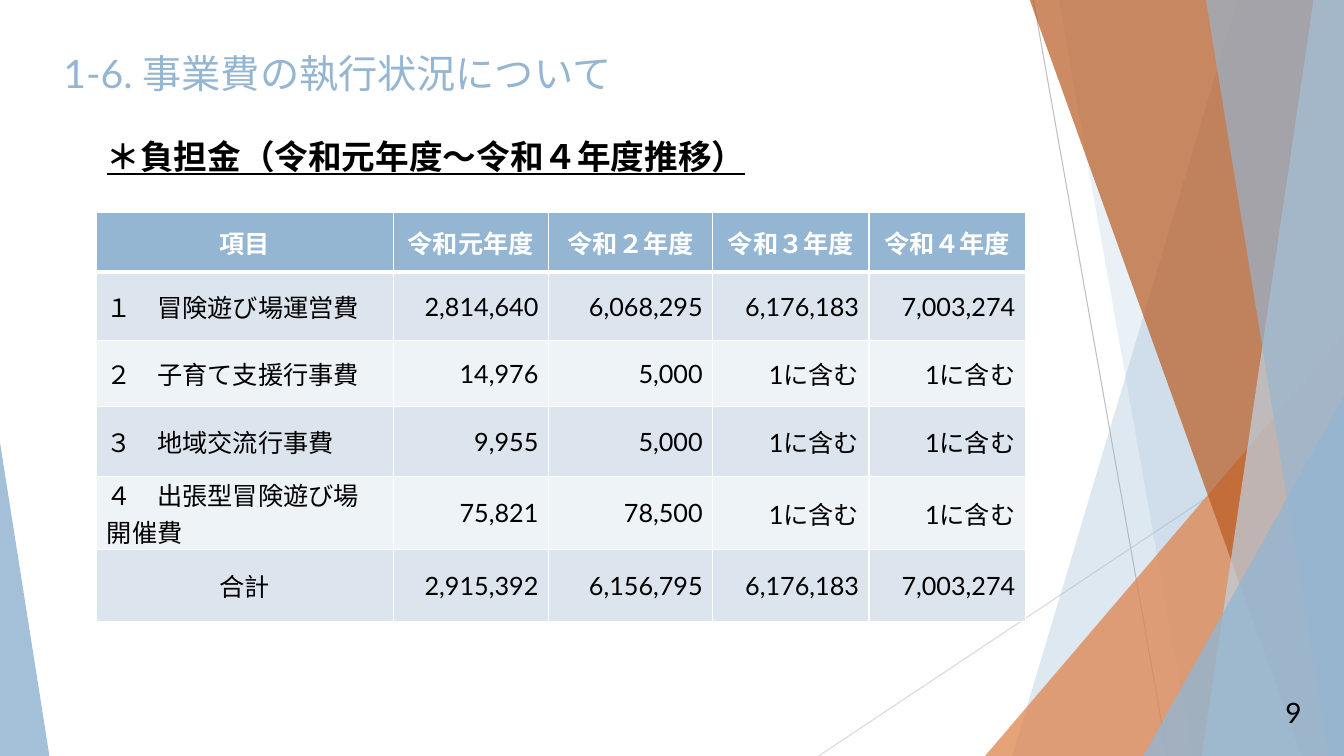
from lxml import etree
from pptx import Presentation
from pptx.dml import color
from pptx.enum import shapes, text
from pptx.oxml import ns
from pptx.util import Inches, Pt

FONT = "Lato"
BLUE, ORANGE, WHITE, BLACK = "94B6D2", "DD8047", "FFFFFF", "000000"
BANDS = ("DCE5EE", "EEF3F7")
TOP, BOTTOM, RIGHT = -0.01, 7.5, 13.33
LEFT_ALIGN, CENTER, RIGHT_ALIGN = (
    text.PP_ALIGN.LEFT, text.PP_ALIGN.CENTER, text.PP_ALIGN.RIGHT)

COLUMN_WIDTHS = (2.94, 1.54, 1.63, 1.55, 1.55)
ROW_HEIGHTS = (0.59, 0.68, 0.65, 0.7, 0.72, 0.72)
INCLUDED = "1に含む"
COSTS = (
    ("項目", "令和元年度", "令和２年度", "令和３年度", "令和４年度"),
    ("１　冒険遊び場運営費", "2,814,640", "6,068,295", "6,176,183", "7,003,274"),
    ("２　子育て支援行事費", "14,976", "5,000", INCLUDED, INCLUDED),
    ("３　地域交流行事費", "9,955", "5,000", INCLUDED, INCLUDED),
    ("４　出張型冒険遊び場開催費", "75,821", "78,500", INCLUDED, INCLUDED),
    ("合計", "2,915,392", "6,156,795", "6,176,183", "7,003,274"),
)


def rgb(value):
    return color.RGBColor.from_string(value)


def paint(shape, fill, opacity):
    """Give a shape a translucent fill, no outline and no shadow."""
    shape.shadow.inherit = False
    shape.line.fill.background()
    shape.fill.solid()
    shape.fill.fore_color.rgb = rgb(fill)
    fill_color = shape.fill._xPr.find(ns.qn("a:solidFill"))[0]
    etree.SubElement(fill_color, ns.qn("a:alpha"), val=str(opacity * 1000))


def add_line(slide, start, end, line_color):
    ends = [Inches(value) for value in start + end]
    line = slide.shapes.add_connector(shapes.MSO_CONNECTOR.STRAIGHT, *ends)
    line.line.color.rgb = rgb(line_color)
    line.line.width = Pt(0.75)
    etree.SubElement(line._element.spPr, ns.qn("a:effectLst"))


def add_band(slide, top_left, bottom_left, fill, opacity):
    """Fill the area from a slanted left edge to the right slide edge."""
    builder = slide.shapes.build_freeform(
        Inches(top_left), Inches(TOP), scale=1.0)
    corners = ((RIGHT, TOP), (RIGHT, BOTTOM), (bottom_left, BOTTOM))
    builder.add_line_segments(
        [(Inches(x), Inches(y)) for x, y in corners], close=True)
    paint(builder.convert_to_shape(), fill, opacity)


def add_triangle(slide, left, top, width, apex, fill, opacity):
    triangle = slide.shapes.add_shape(
        shapes.MSO_SHAPE.ISOSCELES_TRIANGLE, Inches(left), Inches(top),
        Inches(width), Inches(BOTTOM - top))
    triangle.adjustments[0] = apex
    paint(triangle, fill, opacity)


def write(frame, words, size=18, font_color=BLACK, bold=False,
          underline=False, align=LEFT_ALIGN, line_spacing=None, before=None):
    paragraph = frame.paragraphs[0]
    paragraph.alignment = align
    if line_spacing:
        paragraph.line_spacing = Pt(line_spacing)
    if before:
        paragraph.space_before = Pt(before)
    run = paragraph.add_run()
    run.text = words
    run.font.name = FONT
    run.font.size = Pt(size)
    run.font.bold = bold
    run.font.underline = underline
    run.font.color.rgb = rgb(font_color)


def add_text(slide, left, top, width, height, words,
             anchor=text.MSO_ANCHOR.TOP, **style):
    box = slide.shapes.add_textbox(
        Inches(left), Inches(top), Inches(width), Inches(height))
    box.text_frame.word_wrap = True
    box.text_frame.vertical_anchor = anchor
    write(box.text_frame, words, **style)


def set_borders(cell, **widths):
    """Draw white cell borders; widths are points by side."""
    properties = cell._tc.get_or_add_tcPr()
    for index, (side, width) in enumerate(widths.items()):
        border = etree.Element(ns.qn("a:" + side), w=str(Pt(width)))
        fill = etree.SubElement(border, ns.qn("a:solidFill"))
        etree.SubElement(fill, ns.qn("a:srgbClr"), val=WHITE)
        properties.insert(index, border)


def add_cost_table(slide):
    table = slide.shapes.add_table(
        len(COSTS), len(COLUMN_WIDTHS), Inches(0.96), Inches(2.11),
        Inches(sum(COLUMN_WIDTHS)), Inches(sum(ROW_HEIGHTS))).table
    for column, width in zip(table.columns, COLUMN_WIDTHS):
        column.width = Inches(width)
    for row, height in zip(table.rows, ROW_HEIGHTS):
        row.height = Inches(height)

    last = len(COSTS) - 1
    for row, values in enumerate(COSTS):
        header = row == 0
        for column, words in enumerate(values):
            cell = table.cell(row, column)
            cell.vertical_anchor = text.MSO_ANCHOR.MIDDLE
            cell.margin_top = cell.margin_bottom = 0
            cell.fill.solid()
            cell.fill.fore_color.rgb = rgb(
                BLUE if header else BANDS[(row - 1) % 2])
            set_borders(cell, lnL=1, lnR=1, lnT=3 if row == 1 else 1,
                        lnB=3 if header else 1)
            if header or (row == last and column == 0):
                align = CENTER
            else:
                align = RIGHT_ALIGN if column else LEFT_ALIGN
            write(cell.text_frame, words, bold=header, align=align,
                  font_color=WHITE if header else BLACK)


def add_decoration(slide):
    add_line(slide, (10.25, 0), (11.58, BOTTOM), "BFBFBF")
    add_line(slide, (RIGHT, 4.03), (8.12, BOTTOM), "D9D9D9")
    add_band(slide, 12.28, 10.04, BLUE, 30)
    add_band(slide, 10.5, 11.83, BLUE, 20)
    add_triangle(slide, 9.77, 3.33, 3.56, 1, ORANGE, 72)
    add_band(slide, 10.21, 12.91, "B95B22", 70)
    add_band(slide, 13.03, 11.92, "BFD3E4", 70)
    add_band(slide, 11.96, 13.18, BLUE, 65)
    add_triangle(slide, 11.34, 3.93, 1.99, 1, BLUE, 80)
    add_triangle(slide, 0, 4.39, 0.49, 0, BLUE, 85)


def main():
    presentation = Presentation()
    presentation.slide_width = Inches(13.33)
    presentation.slide_height = Inches(7.5)
    slide = presentation.slides.add_slide(presentation.slide_layouts[6])

    # Slanted bands and triangles along the edges
    add_decoration(slide)

    # Headings and page number
    add_text(slide, 0.53, 0.19, 11.5, 1.06, "1-6. 事業費の執行状況について",
             anchor=text.MSO_ANCHOR.MIDDLE, size=28, font_color=BLUE)
    add_text(slide, 0.96, 1.21, 10.19, 0.68,
             "＊負担金（令和元年度～令和４年度推移）", size=24, bold=True,
             underline=True, line_spacing=35, before=10)
    add_text(slide, 12.65, 6.85, 0.46, 0.44, "9", size=20)

    # Costs by fiscal year
    add_cost_table(slide)

    presentation.save("out.pptx")


if __name__ == "__main__":
    main()
